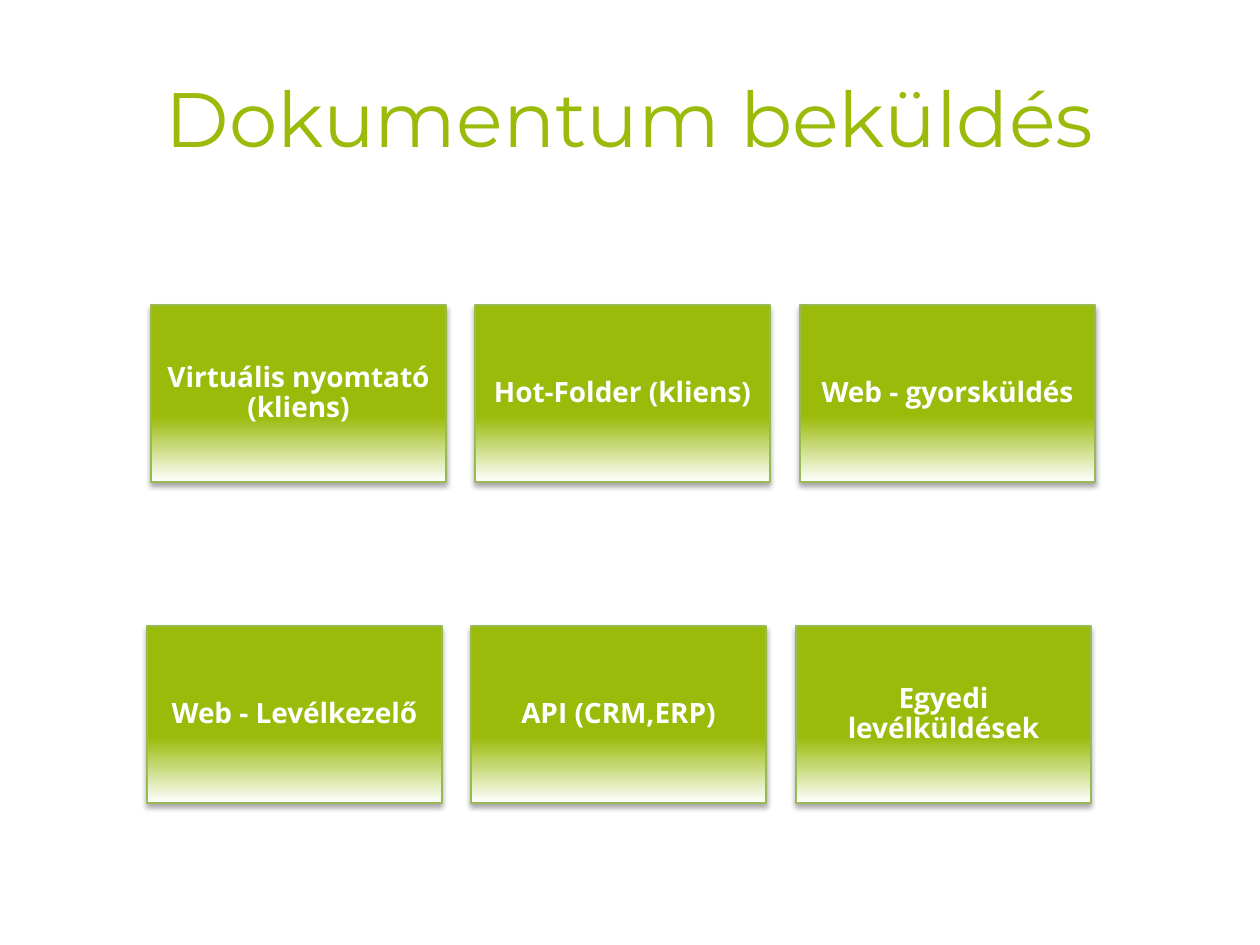
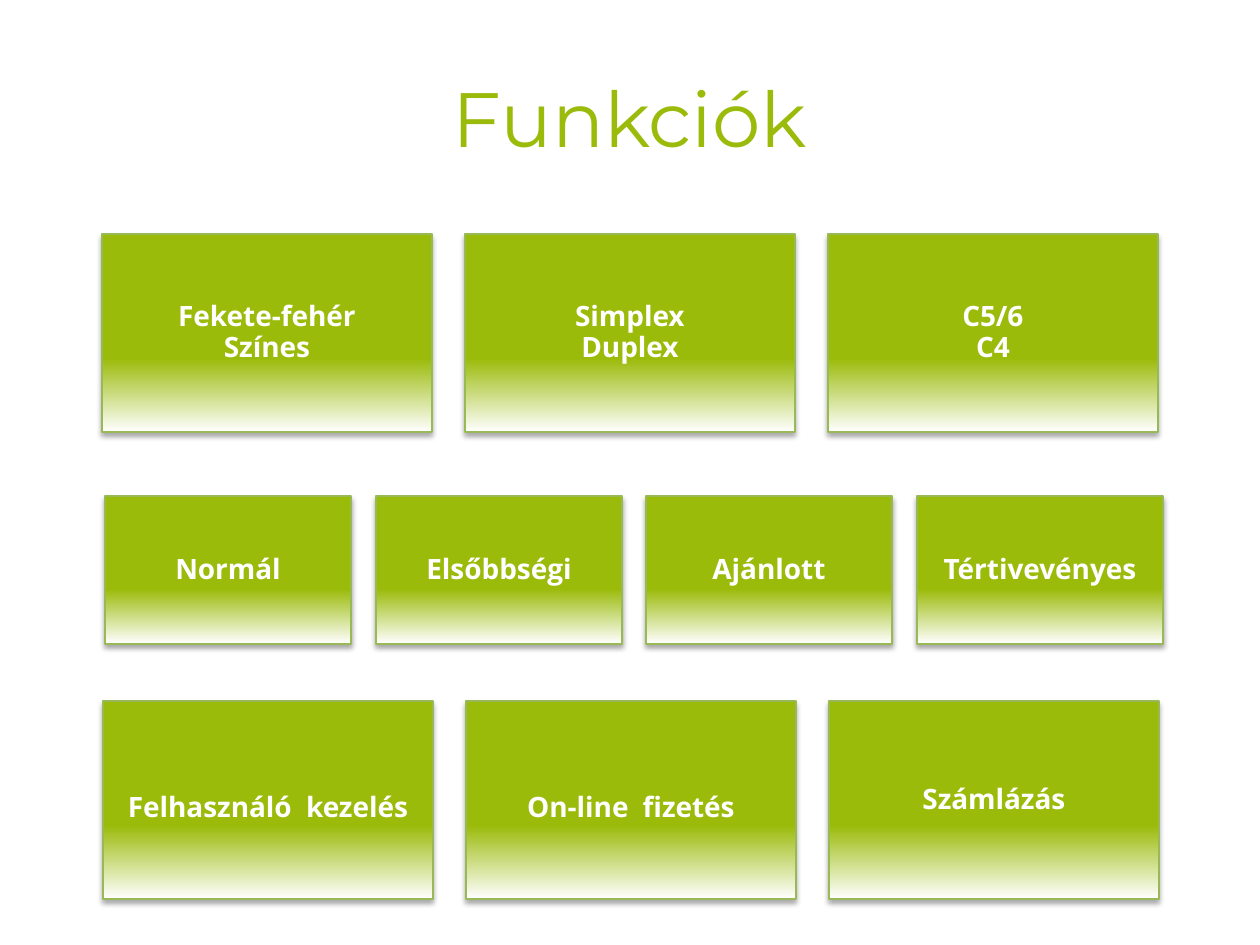
from copy import deepcopy
from dataclasses import dataclass

from lxml.etree import SubElement
from pptx import Presentation
from pptx.dml.color import RGBColor as Rgb
from pptx.enum.shapes import MSO_SHAPE as Preset
from pptx.enum.text import MSO_ANCHOR as Anchor, PP_ALIGN as Align
from pptx.oxml.ns import qn
from pptx.util import Emu, Pt


@dataclass(frozen=True)
class Theme:
    green: Rgb = Rgb.from_string("9BBB0B")
    outline: Rgb = Rgb.from_string("98B955")
    white: Rgb = Rgb.from_string("FFFFFF")
    shadow: str = "000000"
    title_font: str = "Montserrat"
    card_font: str = "Open Sans"
    title_size: Pt = Pt(44)
    card_size: Pt = Pt(16)
    gap_size: Pt = Pt(31)
    outline_width: Pt = Pt(0.75)


@dataclass(frozen=True)
class CardRow:
    left: int
    top: int
    card_width: int
    labels: tuple
    wide_gap: bool = False


THEME = Theme()
PX_PER_INCH = 126
SLIDE_BOX = (1260, 945)
TITLE_BOX = (63, 38, 1134, 158)
CARD_INSET = 10

SUBMISSION_ROWS = (
    CardRow(151, 305, 295, ("Virtuális nyomtató (kliens)", "Hot-Folder (kliens)", "Web - gyorsküldés")),
    CardRow(147, 626, 295, ("Web - Levélkezelő", "API (CRM,ERP)", "Egyedi levélküldések")),
)
FUNCTION_ROWS = (
    CardRow(102, 234, 330, ("Fekete-fehér\nSzínes", "Simplex\nDuplex", "C5/6\nC4")),
    CardRow(105, 496, 246, ("Normál", "Elsőbbségi", "Ajánlott", "Tértivevényes")),
    CardRow(103, 701, 330, ("Felhasználó kezelés", "On-line fizetés", "Számlázás"), wide_gap=True),
)


def px(length):
    return Emu(round(length * 914400 / PX_PER_INCH))


def place_title(slide, box, wording):
    title = slide.shapes.title
    title.left, title.top, title.width, title.height = map(px, box)
    frame = title.text_frame
    frame.text = wording
    frame.vertical_anchor = Anchor.MIDDLE
    heading = frame.paragraphs[0]
    heading.alignment = Align.CENTER
    font = heading.runs[0].font
    font.name, font.size = THEME.title_font, THEME.title_size
    font.color.rgb = THEME.green


def add_soft_shadow(card):
    card.shadow.inherit = False
    effects = card._element.spPr.find(qn("a:effectLst"))
    shadow = SubElement(effects, qn("a:outerShdw"), blurRad=str(Pt(3.1)), dist=str(Pt(1.8)),
                        dir="5400000", rotWithShape="0")
    color = SubElement(shadow, qn("a:srgbClr"), val=THEME.shadow)
    SubElement(color, qn("a:alpha"), val="35000")


def paint_card(card):
    card.fill.gradient()
    card.fill.gradient_angle = 90
    stops = ((0, THEME.white), (0.37, THEME.green))
    for stop, (position, color) in zip(card.fill.gradient_stops, stops):
        stop.position = position
        stop.color.rgb = color
    card.line.color.rgb = THEME.outline
    card.line.width = THEME.outline_width
    add_soft_shadow(card)


def write_label(card, label, wide_gap):
    frame = card.text_frame
    frame.word_wrap = True
    frame.vertical_anchor = Anchor.MIDDLE
    frame.margin_left = frame.margin_right = px(CARD_INSET)
    frame.margin_top = frame.margin_bottom = px(CARD_INSET)
    caption = frame.paragraphs[0]
    caption.alignment = Align.CENTER
    caption.line_spacing = 0.9
    if wide_gap:
        for part in filter(None, label.partition(" ")):
            caption.add_run().text = part
    else:
        caption.text = label
    for run in caption.runs:
        is_gap = run.text == " "
        run.font.name = THEME.card_font
        run.font.size = THEME.gap_size if is_gap else THEME.card_size
        run.font.bold = not is_gap
        run.font.color.rgb = THEME.white
    for line_break in caption._p.findall(qn("a:br")):
        line_break.append(deepcopy(caption.runs[0]._r.rPr))


def add_card(slide, box, label, wide_gap):
    card = slide.shapes.add_shape(Preset.RECTANGLE, *map(px, box))
    paint_card(card)
    write_label(card, label, wide_gap)


def add_card_row(slide, row):
    width = row.card_width
    for column, label in enumerate(row.labels):
        left = row.left + round(column * width * 1.1)
        add_card(slide, (left, row.top, width, round(width * 0.6)), label, row.wide_gap)


def add_card_slide(deck, wording, rows):
    slide = deck.slides.add_slide(deck.slide_layouts[5])
    place_title(slide, TITLE_BOX, wording)
    for row in rows:
        add_card_row(slide, row)


def main():
    deck = Presentation()
    deck.slide_width, deck.slide_height = map(px, SLIDE_BOX)
    add_card_slide(deck, "Dokumentum beküldés", SUBMISSION_ROWS)
    add_card_slide(deck, "Funkciók", FUNCTION_ROWS)
    deck.save("out.pptx")


if __name__ == "__main__":
    main()
